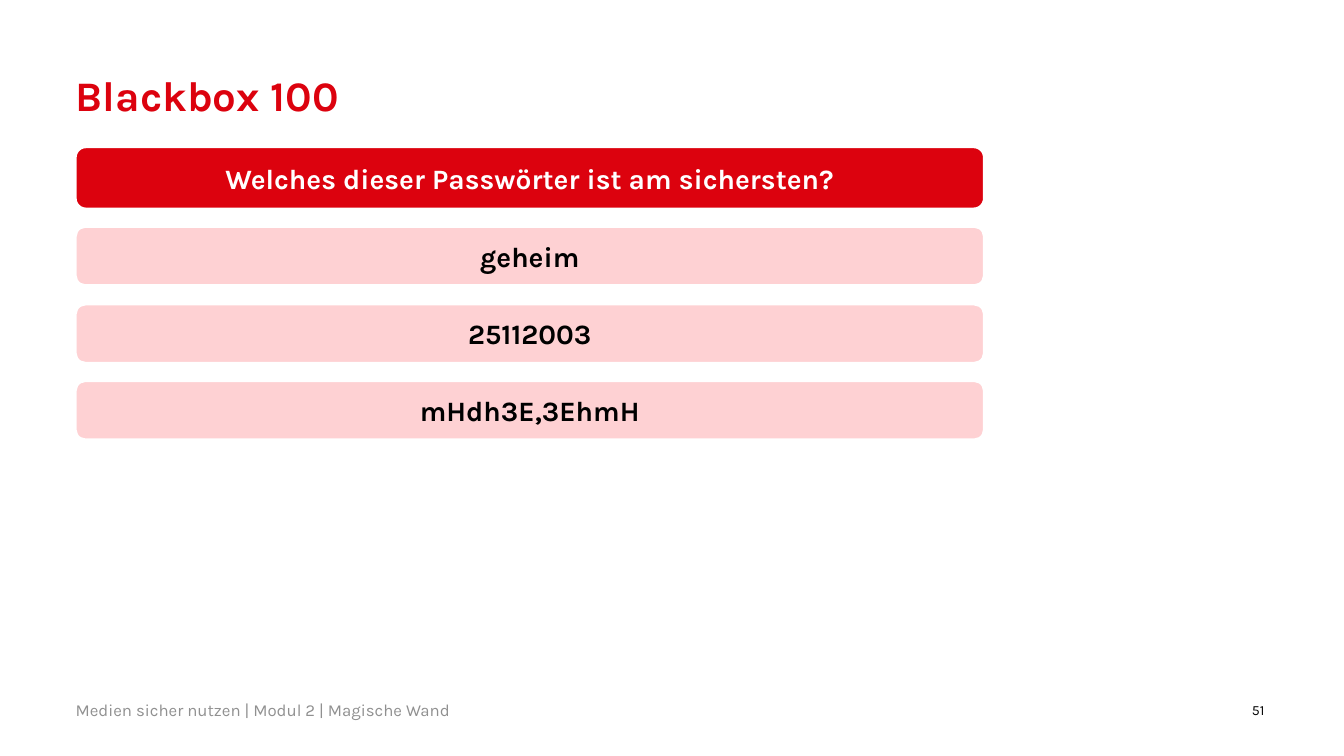
"""Build the quiz slide "Blackbox 100" with a question and three answers."""
from dataclasses import dataclass

from lxml import etree
from pptx import Presentation
from pptx.dml.color import RGBColor
from pptx.enum.shapes import MSO_SHAPE
from pptx.enum.text import MSO_ANCHOR, PP_ALIGN
from pptx.oxml.ns import qn
from pptx.shapes.autoshape import Shape
from pptx.slide import Slide
from pptx.util import Emu, Pt

ROUNDED = MSO_SHAPE.ROUNDED_RECTANGLE
TOP, MIDDLE = MSO_ANCHOR.TOP, MSO_ANCHOR.MIDDLE
LEFT, CENTER, RIGHT = PP_ALIGN.LEFT, PP_ALIGN.CENTER, PP_ALIGN.RIGHT

EMU_PER_PX = 9144
SLIDE_WIDTH, SLIDE_HEIGHT = 1333, 750
MARGIN = 75
BAR_WIDTH = 901
FONT = "Karla"
COLORS = {
    "red": "DC020E",
    "pink": "FEC6C9",
    "white": "FFFFFF",
    "black": "000000",
    "gray": "909090",
}


@dataclass(frozen=True)
class Label:
    text: str
    left: int
    top: int
    width: int
    height: int
    size: int
    color: str
    bold: bool = False
    align: PP_ALIGN = LEFT
    anchor: MSO_ANCHOR = MIDDLE
    line_spacing: float = 1.0


@dataclass(frozen=True)
class Bar:
    text: str
    top: int
    height: int = 58
    fill: str = "pink"
    color: str = "black"
    opacity: int = 80


LABELS = [
    Label("Blackbox 100", MARGIN, 75, 1181, 43, 30, "red", True, LEFT, TOP, 0.9),
    Label("Medien sicher nutzen | Modul 2 | Magische Wand", MARGIN, 696, 984, 16, 12, "gray"),
    Label("51", 1184, 696, 70, 16, 10, "black", align=RIGHT),
]
BARS = [
    Bar("Welches dieser Passwörter ist am sichersten?", 146, 61, "red", "white", 100),
    Bar("geheim", 225),
    Bar("25112003", 302),
    Bar("mHdh3E,3EhmH", 378),
]


def px(length: int) -> Emu:
    return Emu(length * EMU_PER_PX)


def rgb(name: str) -> RGBColor:
    return RGBColor.from_string(COLORS[name])


def write_text(shape: Shape, text: str, size: int, color: str, bold: bool,
               align: PP_ALIGN, anchor: MSO_ANCHOR, line_spacing: float = 1.0) -> None:
    frame = shape.text_frame
    frame.word_wrap = True
    frame.vertical_anchor = anchor
    paragraph = frame.paragraphs[0]
    paragraph.text = text
    paragraph.alignment = align
    paragraph.line_spacing = line_spacing
    font = paragraph.font
    font.name, font.size, font.bold = FONT, Pt(size), bold
    font.color.rgb = rgb(color)


def add_label(slide: Slide, label: Label) -> None:
    shape = slide.shapes.add_textbox(
        px(label.left), px(label.top), px(label.width), px(label.height))
    frame = shape.text_frame
    frame.margin_left = frame.margin_top = frame.margin_right = frame.margin_bottom = 0
    write_text(shape, label.text, label.size, label.color, label.bold,
               label.align, label.anchor, label.line_spacing)


def add_bar(slide: Slide, bar: Bar) -> None:
    shape = slide.shapes.add_shape(
        ROUNDED, px(MARGIN), px(bar.top), px(BAR_WIDTH), px(bar.height))
    shape.shadow.inherit = False
    shape.fill.solid()
    shape.fill.fore_color.rgb = rgb(bar.fill)
    if bar.opacity < 100:
        fill_color = shape.element.spPr.find(qn("a:solidFill")).find(qn("a:srgbClr"))
        etree.SubElement(fill_color, qn("a:alpha"), val=str(bar.opacity * 1000))
    shape.line.color.rgb = rgb("white")
    shape.line.width = Pt(1.5)
    write_text(shape, bar.text, 20, bar.color, True, CENTER, MIDDLE)


def main() -> None:
    presentation = Presentation()
    presentation.slide_width = px(SLIDE_WIDTH)
    presentation.slide_height = px(SLIDE_HEIGHT)
    slide = presentation.slides.add_slide(presentation.slide_layouts[6])
    for label in LABELS:
        add_label(slide, label)
    for bar in BARS:
        add_bar(slide, bar)
    presentation.save("out.pptx")


if __name__ == "__main__":
    main()
